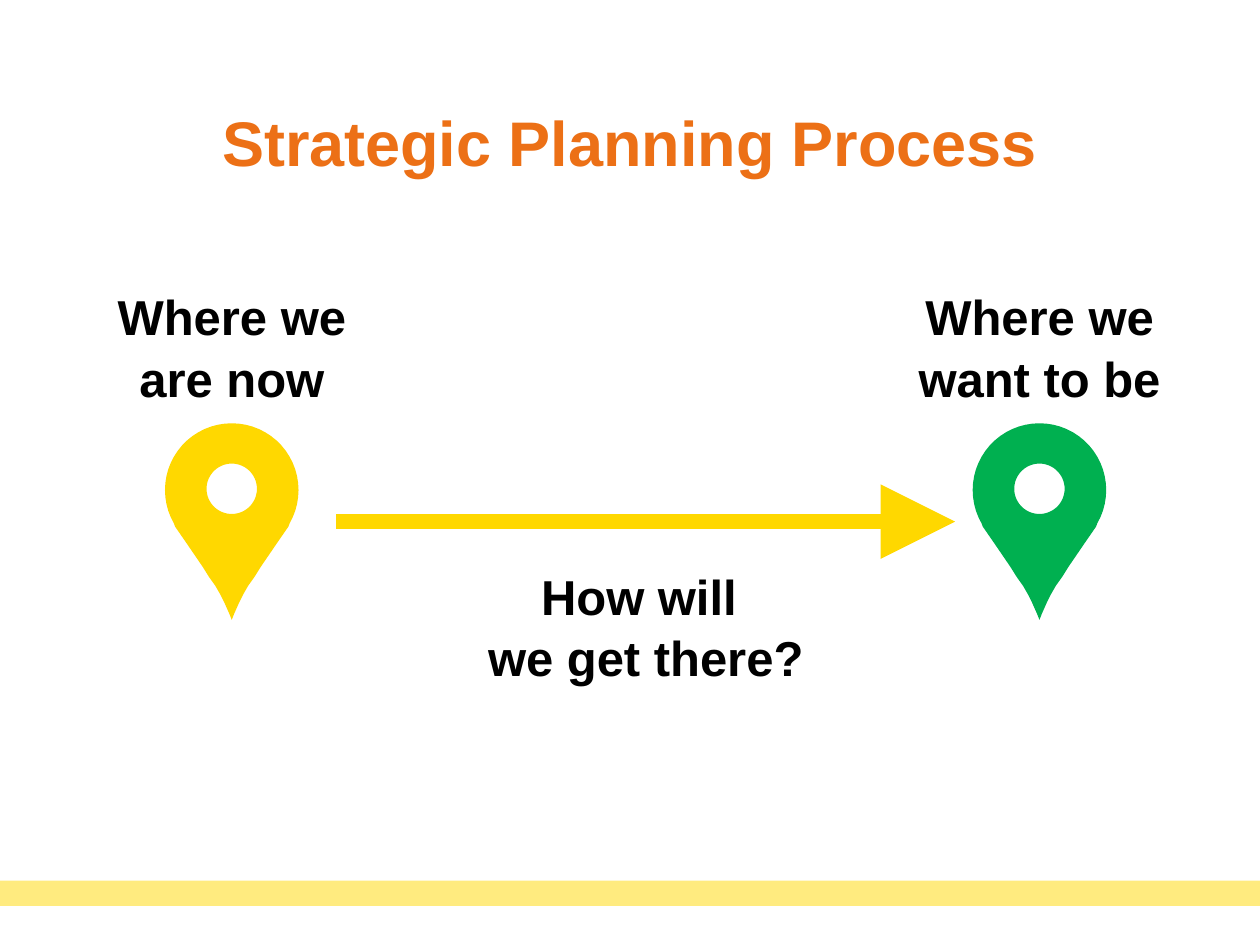
from math import cos, radians, sin

from pptx import Presentation
from pptx.dml.color import RGBColor
from pptx.enum.shapes import MSO_CONNECTOR, MSO_SHAPE
from pptx.enum.text import MSO_ANCHOR, MSO_AUTO_SIZE, PP_ALIGN
from pptx.oxml.ns import qn
from pptx.util import Inches, Pt
from lxml.etree import SubElement

COLORS = {"title": "EC7016", "text": "000000", "now": "FFD800", "goal": "00B050"}

# The slide is a grid of square cells
COLUMNS, ROWS = 10, 7.5
CELL = Inches(1)

# Pin outline, measured from the centre of its head
HEAD_RADIUS, HOLE_RADIUS = 0.53, 0.2
POINT_SIDE = [(0.45, 0.29), (0.36, 0.42), (0.23, 0.61), (0.18, 0.69), (0.13, 0.76),
              (0.09, 0.83), (0.06, 0.89), (0.02, 0.98)]
POINT_TIP = (0, 1.03)


def cells(*counts):
    return [round(count * CELL) for count in counts]


def color(name):
    return RGBColor.from_string(COLORS[name])


def write(shape, text, size=28, ink="text", anchor=MSO_ANCHOR.TOP, spacing=1.05):
    frame = shape.text_frame
    frame.word_wrap = True
    frame.auto_size = MSO_AUTO_SIZE.NONE
    frame.vertical_anchor = anchor
    frame.margin_left = frame.margin_right = frame.margin_top = frame.margin_bottom = 0
    frame.text = text
    para = frame.paragraphs[0]
    para.alignment = PP_ALIGN.CENTER
    para.line_spacing = spacing
    for span in para.runs:
        span.font.name = "Arial"
        span.font.size = Pt(size)
        span.font.bold = True
        span.font.color.rgb = color(ink)


def paint(shape, name):
    shape.shadow.inherit = False
    shape.fill.solid()
    shape.fill.fore_color.rgb = color(name)
    shape.line.fill.background()


def add_title(page, text):
    title = page.shapes.title
    title.left, title.top, title.width, title.height = cells(0.5, 0.17, 9, 1.25)
    write(title, text, size=36, ink="title", anchor=MSO_ANCHOR.BOTTOM, spacing=1)


def add_band(page):
    band = page.shapes.add_shape(MSO_SHAPE.RECTANGLE, *cells(0, 6.99, COLUMNS, 0.2))
    paint(band, "now")
    tint = band.fill._xPr.find(qn("a:solidFill"))[0]
    SubElement(tint, qn("a:alpha"), val="50000")


def add_label(page, text, left, top, width):
    box = page.shapes.add_textbox(*cells(left, top, width, 1.56))
    write(box, text)


def arc(radius, start, stop, step, rise=0):
    return [(radius * cos(radians(angle)), radius * sin(radians(angle)) - rise)
            for angle in range(start, stop, step)]


def add_pin(page, column, row, name):
    def place(points):
        return [tuple(cells(column + x, row + y)) for x, y in points]

    left_side = [(-x, y) for x, y in reversed(POINT_SIDE)]
    outline = place(arc(HEAD_RADIUS, 150, 391, 6) + POINT_SIDE + [POINT_TIP] + left_side)
    hole = place(arc(HOLE_RADIUS, 360, 0, -6, rise=0.01))
    builder = page.shapes.build_freeform(*outline[0])
    builder.add_line_segments(outline[1:])
    builder.move_to(*hole[0])
    builder.add_line_segments(hole[1:])
    paint(builder.convert_to_shape(), name)


def add_arrow(page, start, end, row, name):
    x1, x2, y = cells(start, end, row)
    arrow = page.shapes.add_connector(MSO_CONNECTOR.STRAIGHT, x1, y, x2, y)
    arrow.line.width = Pt(8.5)
    arrow.line.color.rgb = color(name)
    SubElement(arrow.line._get_or_add_ln(), qn("a:tailEnd"),
               type="triangle", w="lg", len="lg")
    SubElement(arrow._element.spPr, qn("a:effectLst"))


def main():
    deck = Presentation()
    deck.slide_width, deck.slide_height = cells(COLUMNS, ROWS)
    page = deck.slides.add_slide(deck.slide_layouts[5])

    # Heading and footer band
    add_band(page)
    add_title(page, "Strategic Planning Process")

    # Start and goal: a label centred over each pin
    for text, name, column in (("Where we are now", "now", 1.84),
                               ("Where we want to be", "goal", 8.25)):
        add_pin(page, column, 3.89, name)
        add_label(page, text, column - 1.21, 2.25, 2.42)

    # The way between them
    add_arrow(page, 2.67, 7.58, 4.14, "now")
    add_label(page, "How will \vwe get there?", 3.75, 4.47, 2.75)

    deck.save("out.pptx")


if __name__ == "__main__":
    main()
